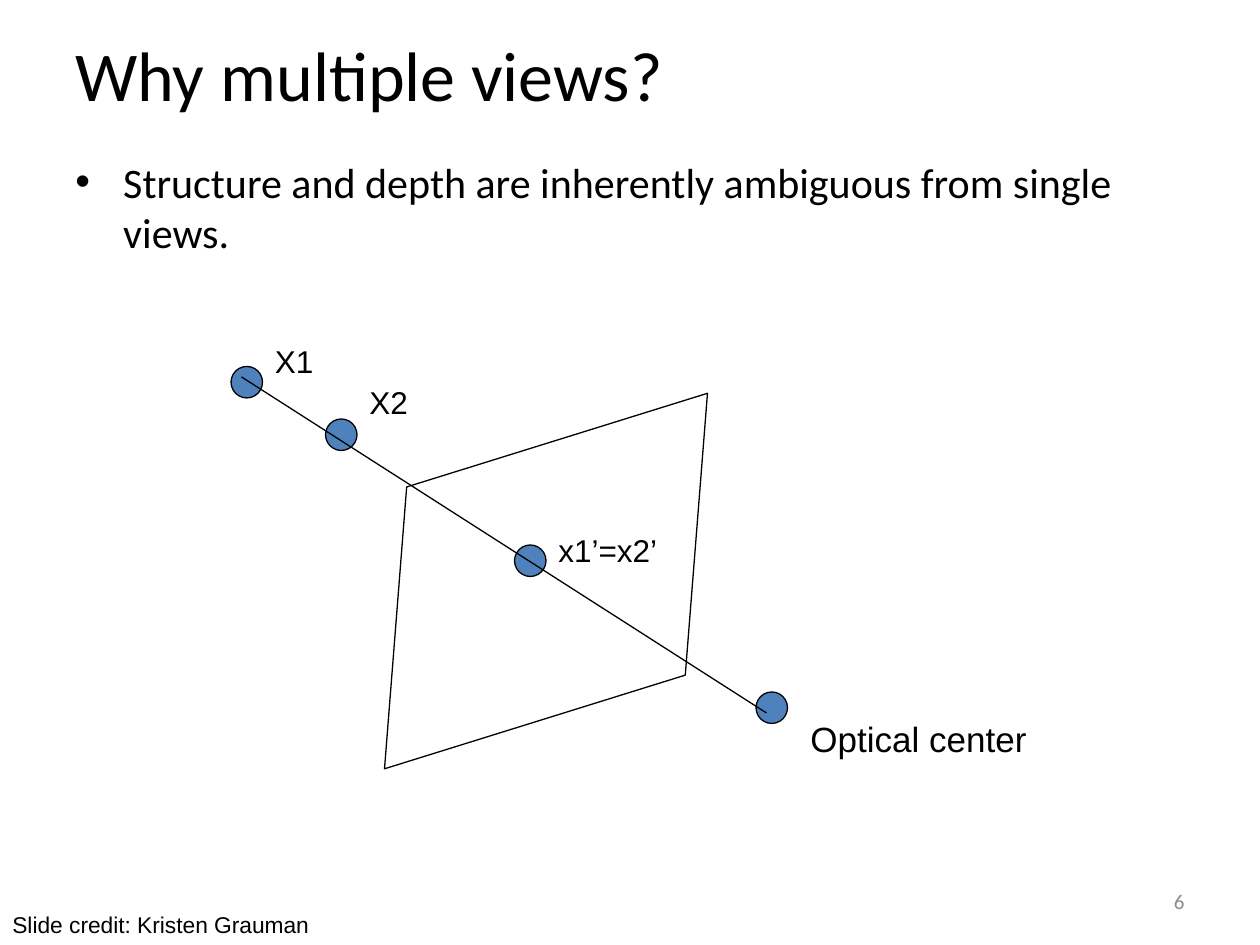
from dataclasses import dataclass

from lxml.etree import SubElement
from pptx import Presentation
from pptx.dml.color import RGBColor
from pptx.enum.shapes import MSO_CONNECTOR as Connector, MSO_SHAPE as Shape
from pptx.enum.text import MSO_ANCHOR as Anchor, PP_ALIGN as Align
from pptx.oxml.ns import qn
from pptx.util import Inches, Pt

COLUMNS, ROWS = 120, 90
SLIDE_WIDTH, SLIDE_HEIGHT = Inches(10), Inches(7.5)
DOT_SIZE = 3


@dataclass(frozen=True)
class Theme:
    ink: RGBColor = RGBColor(0x00, 0x00, 0x00)
    dot: RGBColor = RGBColor(0x4F, 0x81, 0xBD)
    muted: RGBColor = RGBColor(0x8C, 0x8C, 0x8C)
    heading_font: str = "Calibri"
    label_font: str = "Arial"
    title: int = 40
    body: int = 24
    center_label: int = 20
    point_label: int = 18
    credit: int = 13
    page_number: int = 12
    line: float = 0.75


THEME = Theme()


def place(column, row):
    return round(SLIDE_WIDTH * column / COLUMNS), round(SLIDE_HEIGHT * row / ROWS)


def set_format(target, **values):
    for name, value in values.items():
        setattr(target, name, value)


def set_line(line):
    line.color.rgb = THEME.ink
    line.width = Pt(THEME.line)


def add_text(slide, text, column, row, width, height, size, font=THEME.label_font,
             color=THEME.ink, anchor=Anchor.TOP, align=Align.LEFT, bullet=False):
    box = slide.shapes.add_textbox(*place(column, row), *place(width, height))
    set_format(box.text_frame, word_wrap=True, vertical_anchor=anchor)
    paragraph = box.text_frame.paragraphs[0]
    set_format(paragraph, text=text, alignment=align)
    if bullet:
        add_bullet(paragraph)
    set_format(paragraph.runs[0].font, name=font, size=Pt(size))
    paragraph.runs[0].font.color.rgb = color


def add_bullet(paragraph, indent=Inches(0.38)):
    properties = paragraph._p.get_or_add_pPr()
    properties.set("marL", str(indent))
    properties.set("indent", str(-indent))
    SubElement(properties, qn("a:buFont"), typeface="Arial")
    SubElement(properties, qn("a:buChar"), char="•")


def add_outline(slide, kind, column, row, width, height):
    """Add a preset shape with a thin line and no fill."""
    shape = slide.shapes.add_shape(kind, *place(column, row), *place(width, height))
    shape.shadow.inherit = False
    shape.fill.background()
    set_line(shape.line)
    return shape


def add_image_plane(slide):
    plane = add_outline(slide, Shape.PARALLELOGRAM, 32, 42.84, 40, 25)
    plane.adjustments[0] = 0.4
    plane.rotation = 342.7


def add_dot(slide, column, row):
    dot = add_outline(slide, Shape.OVAL, column, row, DOT_SIZE, DOT_SIZE)
    dot.fill.solid()
    dot.fill.fore_color.rgb = THEME.dot


def add_ray(slide, start, end):
    ray = slide.shapes.add_connector(Connector.STRAIGHT, *place(*start), *place(*end))
    set_line(ray.line)
    SubElement(ray._element.spPr, qn("a:effectLst"))


def main():
    presentation = Presentation()
    set_format(presentation, slide_width=SLIDE_WIDTH, slide_height=SLIDE_HEIGHT)
    slide = presentation.slides.add_slide(presentation.slide_layouts[6])

    add_text(slide, "Why multiple views?", 6, -0.5, 108, 15, THEME.title,
             font=THEME.heading_font, anchor=Anchor.MIDDLE)
    add_text(slide, "Structure and depth are inherently ambiguous from single views.",
             6, 14.28, 108, 59.4, THEME.body, font=THEME.heading_font, bullet=True)

    add_image_plane(slide)
    for column, row in [(22, 34.9), (31, 39.9), (49, 51.9), (72, 65.9)]:
        add_dot(slide, column, row)
    add_ray(slide, (23, 35.9), (73, 67.9))

    for text, column, row, width in [("X1", 25, 32, 10), ("X2", 34, 35.9, 10),
                                     ("x1’=x2’", 52, 50, 17)]:
        add_text(slide, text, column, row, width, 4.8, THEME.point_label)
    add_text(slide, "Optical center", 76, 67.7, 39, 5.2, THEME.center_label)

    add_text(slide, "6", 86, 83.4, 28, 4.8, THEME.page_number, font=THEME.heading_font,
             color=THEME.muted, anchor=Anchor.MIDDLE, align=Align.RIGHT)
    add_text(slide, "Slide credit: Kristen Grauman", 0, 86.16, 45, 3.84, THEME.credit)

    presentation.save("out.pptx")


if __name__ == "__main__":
    main()
